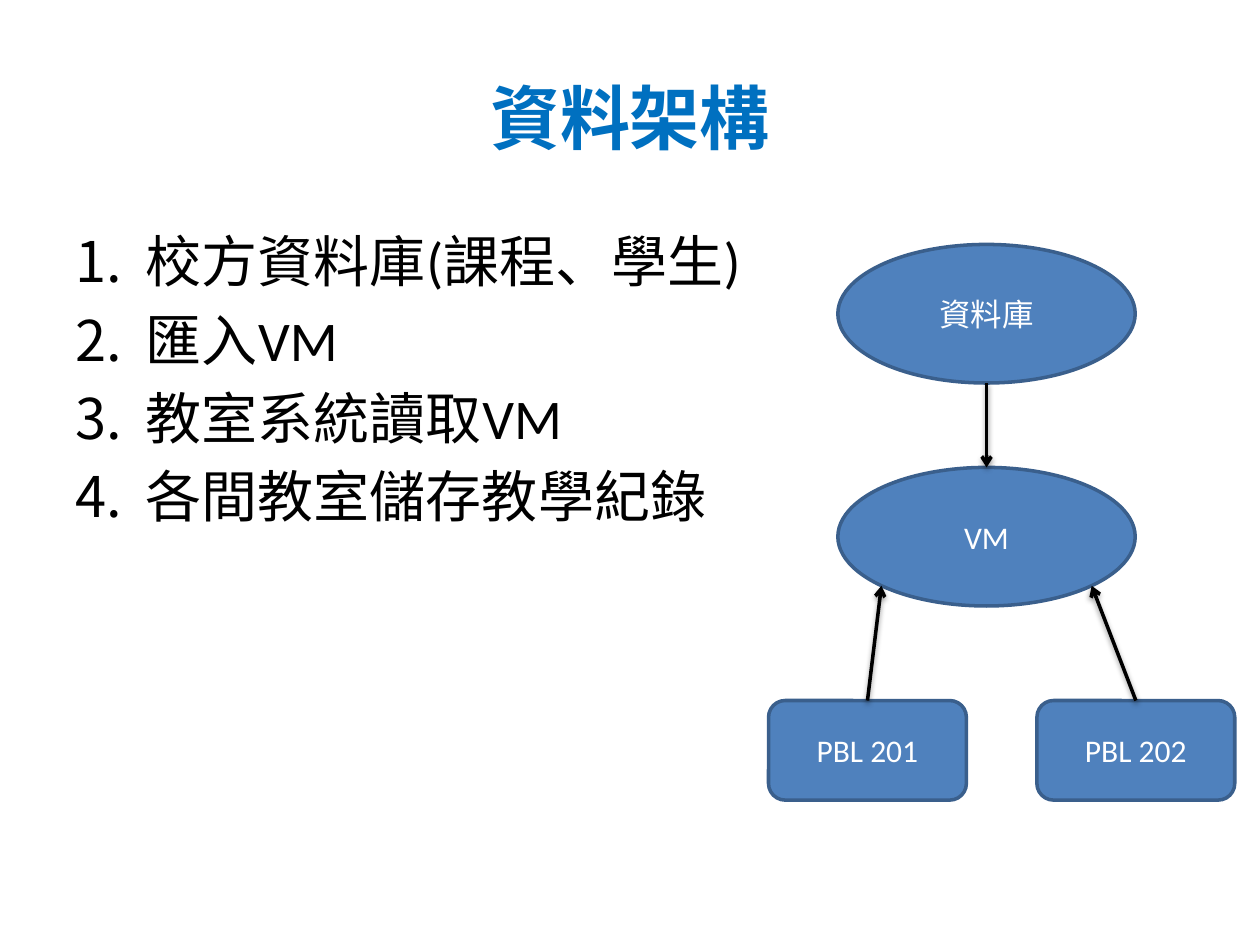
from math import sqrt

from lxml.etree import SubElement
from pptx import Presentation
from pptx.dml.color import RGBColor
from pptx.enum.shapes import MSO_CONNECTOR, MSO_SHAPE
from pptx.enum.text import MSO_ANCHOR, PP_ALIGN
from pptx.oxml.ns import qn
from pptx.util import Inches, Pt

TITLE = "資料架構"
STEPS = ["校方資料庫(課程、學生)", "匯入VM", "教室系統讀取VM", "各間教室儲存教學紀錄"]
# label, shape, left, top, width, height
NODES = [
    ("資料庫", MSO_SHAPE.OVAL, 6.65, 1.94, 2.36, 1.1),
    ("VM", MSO_SHAPE.OVAL, 6.65, 3.71, 2.36, 1.1),
    ("PBL 201", MSO_SHAPE.ROUNDED_RECTANGLE, 6.1, 5.56, 1.57, 0.79),
    ("PBL 202", MSO_SHAPE.ROUNDED_RECTANGLE, 8.23, 5.56, 1.57, 0.79),
]
DIAGONAL = 1 / sqrt(2)
# source, its side, target, its side; a side is (x, y) from the centre in half sizes
ARROWS = [
    ("資料庫", (0, 1), "VM", (0, -1)),
    ("PBL 201", (0, -1), "VM", (-DIAGONAL, DIAGONAL)),
    ("PBL 202", (0, -1), "VM", (DIAGONAL, DIAGONAL)),
]

FONT = "Calibri"
TITLE_BLUE = RGBColor(0x00, 0x70, 0xC0)
NODE_FILL = RGBColor(0x4F, 0x81, 0xBD)
NODE_LINE = RGBColor(0x3A, 0x5F, 0x8C)
BLACK = RGBColor(0x00, 0x00, 0x00)
WHITE = RGBColor(0xFF, 0xFF, 0xFF)


def write(para, text, size, color, bold=False, align=PP_ALIGN.CENTER):
    para.alignment = align
    span = para.add_run()
    span.text = text
    span.font.name = FONT
    span.font.size = Pt(size)
    span.font.bold = bold
    span.font.color.rgb = color


def number(para, indent):
    """Give the paragraph an automatic number and a hanging indent."""
    properties = para._p.get_or_add_pPr()
    properties.set("marL", str(Inches(indent)))
    properties.set("indent", str(-Inches(indent)))
    SubElement(properties, qn("a:buFont"), typeface="+mj-lt")
    SubElement(properties, qn("a:buAutoNum"), type="arabicPeriod")


def add_title(page):
    title = page.shapes.title
    title.left, title.top = Inches(0.5), Inches(0.3)
    title.width, title.height = Inches(9), Inches(1.25)
    title.text_frame.vertical_anchor = MSO_ANCHOR.MIDDLE
    write(title.text_frame.paragraphs[0], TITLE, 40, TITLE_BLUE, bold=True)


def add_steps(page):
    box = page.shapes.add_textbox(Inches(0.5), Inches(1.75), Inches(9), Inches(4.95))
    frame = box.text_frame
    frame.word_wrap = True
    for index, step in enumerate(STEPS):
        para = frame.add_paragraph() if index else frame.paragraphs[0]
        para.space_before = Pt(6.4)
        number(para, 0.56)
        write(para, step, 32, BLACK, align=PP_ALIGN.LEFT)


def add_node(page, label, kind, *place):
    node = page.shapes.add_shape(kind, *map(Inches, place))
    node.shadow.inherit = False
    node.fill.solid()
    node.fill.fore_color.rgb = NODE_FILL
    node.line.color.rgb = NODE_LINE
    node.line.width = Pt(2)
    node.text_frame.vertical_anchor = MSO_ANCHOR.MIDDLE
    write(node.text_frame.paragraphs[0], label, 18, WHITE)
    return node


def anchor(node, side):
    across, down = side
    return (int(node.left + node.width * (1 + across) / 2),
            int(node.top + node.height * (1 + down) / 2))


def add_arrow(page, start, end):
    arrow = page.shapes.add_connector(MSO_CONNECTOR.STRAIGHT, *start, *end)
    arrow.line.color.rgb = BLACK
    arrow.line.width = Pt(2)
    SubElement(arrow.line._get_or_add_ln(), qn("a:tailEnd"), type="arrow")
    effects = SubElement(arrow._element.spPr, qn("a:effectLst"))
    shadow = SubElement(effects, qn("a:outerShdw"), blurRad=str(Pt(3.1)),
                        dist=str(Pt(1.6)), dir="5400000", rotWithShape="0")
    color = SubElement(shadow, qn("a:srgbClr"), val=str(BLACK))
    SubElement(color, qn("a:alpha"), val="38000")


def main():
    deck = Presentation()
    deck.slide_width, deck.slide_height = Inches(10), Inches(7.5)
    page = deck.slides.add_slide(deck.slide_layouts[5])
    add_title(page)
    add_steps(page)
    nodes = {node[0]: add_node(page, *node) for node in NODES}
    for source, source_side, target, target_side in ARROWS:
        add_arrow(page, anchor(nodes[source], source_side),
                  anchor(nodes[target], target_side))
    deck.save("out.pptx")


if __name__ == "__main__":
    main()
